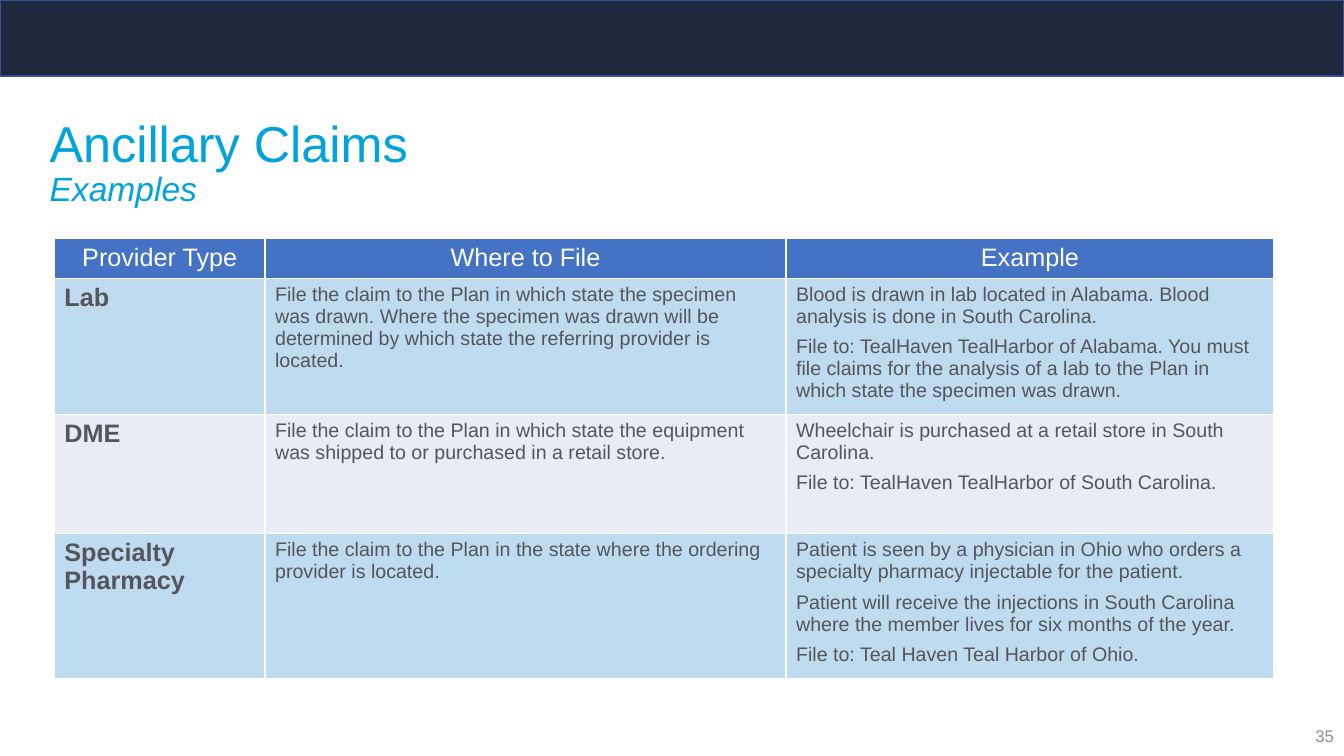
from dataclasses import dataclass

from lxml import etree
from pptx import Presentation
from pptx import util as u
from pptx.dml.color import RGBColor
from pptx.enum import shapes, text
from pptx.oxml import ns


@dataclass(frozen=True)
class Theme:
    font: str = "Arial"
    white: str = "FFFFFF"
    banner: str = "1E283E"
    banner_line: str = "325491"
    title: str = "00A3DB"
    header: str = "4472C4"
    body: str = "54565B"
    number: str = "8C8C8C"
    bands: tuple = ("BFDBEF", "E9EBF5")
    title_size: int = 36
    subtitle_size: int = 24
    label_size: int = 18
    body_size: int = 14
    number_size: int = 12


class SlideBuilder:
    def __init__(self, page, theme):
        self.page = page
        self.theme = theme

    def style(self, para, size, color, bold=False):
        para.font.name = self.theme.font
        para.font.size = u.Pt(size)
        para.font.bold = bold
        para.font.color.rgb = RGBColor.from_string(color)

    def banner(self, width, height):
        bar = self.page.shapes.add_shape(
            shapes.MSO_SHAPE.RECTANGLE, 0, 0, width, height)
        bar.shadow.inherit = False
        bar.fill.solid()
        bar.fill.fore_color.rgb = RGBColor.from_string(self.theme.banner)
        bar.line.color.rgb = RGBColor.from_string(self.theme.banner_line)
        bar.line.width = u.Pt(1)

    def text_box(self, left, top, width, height):
        frame = self.page.shapes.add_textbox(left, top, width, height).text_frame
        frame.word_wrap = True
        frame.vertical_anchor = text.MSO_ANCHOR.MIDDLE
        return frame.paragraphs[0]

    def title(self, heading, subheading, *bounds):
        para = self.text_box(*bounds)
        para.line_spacing = 0.9
        self.style(para, self.theme.title_size, self.theme.title)
        para.add_run().text = heading
        para.add_line_break()
        span = para.add_run()
        span.text = subheading
        span.font.size = u.Pt(self.theme.subtitle_size)
        span.font.italic = True

    def page_number(self, number, *bounds):
        para = self.text_box(*bounds)
        para.text = number
        para.alignment = text.PP_ALIGN.RIGHT
        self.style(para, self.theme.number_size, self.theme.number)

    def borders(self, cell):
        properties = cell._tc.get_or_add_tcPr()
        for side in ("lnL", "lnR", "lnT", "lnB"):
            line = etree.SubElement(
                properties, ns.qn(f"a:{side}"), w=str(u.Pt(1)))
            fill = etree.SubElement(line, ns.qn("a:solidFill"))
            etree.SubElement(fill, ns.qn("a:srgbClr"), val=self.theme.white)

    def cell(self, cell, lines, fill, size, color, bold, align):
        self.borders(cell)
        cell.fill.solid()
        cell.fill.fore_color.rgb = RGBColor.from_string(fill)
        cell.text = "\n".join(lines)
        for para in cell.text_frame.paragraphs:
            self.style(para, size, color, bold)
            para.alignment = align
            para.space_after = u.Pt(6 if len(lines) > 1 else 0)

    def table(self, rows, left, top, widths, heights):
        theme = self.theme
        grid = self.page.shapes.add_table(
            len(rows), len(widths), left, top, sum(widths), sum(heights)).table
        grid.first_row = False
        grid.horz_banding = False
        for column, width in zip(grid.columns, widths):
            column.width = width
        for r, (row, height) in enumerate(zip(rows, heights)):
            grid.rows[r].height = height
            for c, lines in enumerate(row):
                header, label = r == 0, c == 0
                self.cell(
                    grid.cell(r, c), lines,
                    fill=theme.header if header else theme.bands[(r - 1) % 2],
                    size=theme.label_size if header or label else theme.body_size,
                    color=theme.white if header else theme.body,
                    bold=label and not header,
                    align=text.PP_ALIGN.CENTER if header else text.PP_ALIGN.LEFT)


CLAIMS = [
    (["Provider Type"], ["Where to File"], ["Example"]),
    (["Lab"],
     ["File the claim to the Plan in which state the specimen was drawn. Where the "
      "specimen was drawn will be determined by which state the referring provider "
      "is located."],
     ["Blood is drawn in lab located in Alabama. Blood analysis is done in South "
      "Carolina.",
      "File to: TealHaven TealHarbor of Alabama. You must file claims for the "
      "analysis of a lab to the Plan in which state the specimen was drawn."]),
    (["DME"],
     ["File the claim to the Plan in which state the equipment was shipped to or "
      "purchased in a retail store."],
     ["Wheelchair is purchased at a retail store in South Carolina.",
      "File to: TealHaven TealHarbor of South Carolina."]),
    (["Specialty Pharmacy"],
     ["File the claim to the Plan in the state where the ordering provider is "
      "located."],
     ["Patient is seen by a physician in Ohio who orders a specialty pharmacy "
      "injectable for the patient.",
      "Patient will receive the injections in South Carolina where the member lives "
      "for six months of the year.",
      "File to: Teal Haven Teal Harbor of Ohio."]),
]


def main():
    deck = Presentation()
    deck.slide_width = u.Cm(33.87)
    deck.slide_height = u.Cm(19.05)
    builder = SlideBuilder(deck.slides.add_slide(deck.slide_layouts[6]), Theme())
    builder.banner(deck.slide_width, u.Cm(1.92))
    builder.title("Ancillary Claims", "Examples",
                  u.Cm(1), u.Cm(2.29), u.Cm(31.88), u.Cm(3.68))
    builder.table(CLAIMS, u.Cm(1.37), u.Cm(6),
                  [u.Cm(width) for width in (5.31, 13.13, 12.29)],
                  [u.Cm(height) for height in (0.99, 3.23, 3, 3.46)])
    builder.page_number("35", u.Cm(26.25), u.Cm(18.03), u.Cm(7.62), u.Cm(1.02))
    deck.save("out.pptx")


if __name__ == "__main__":
    main()
